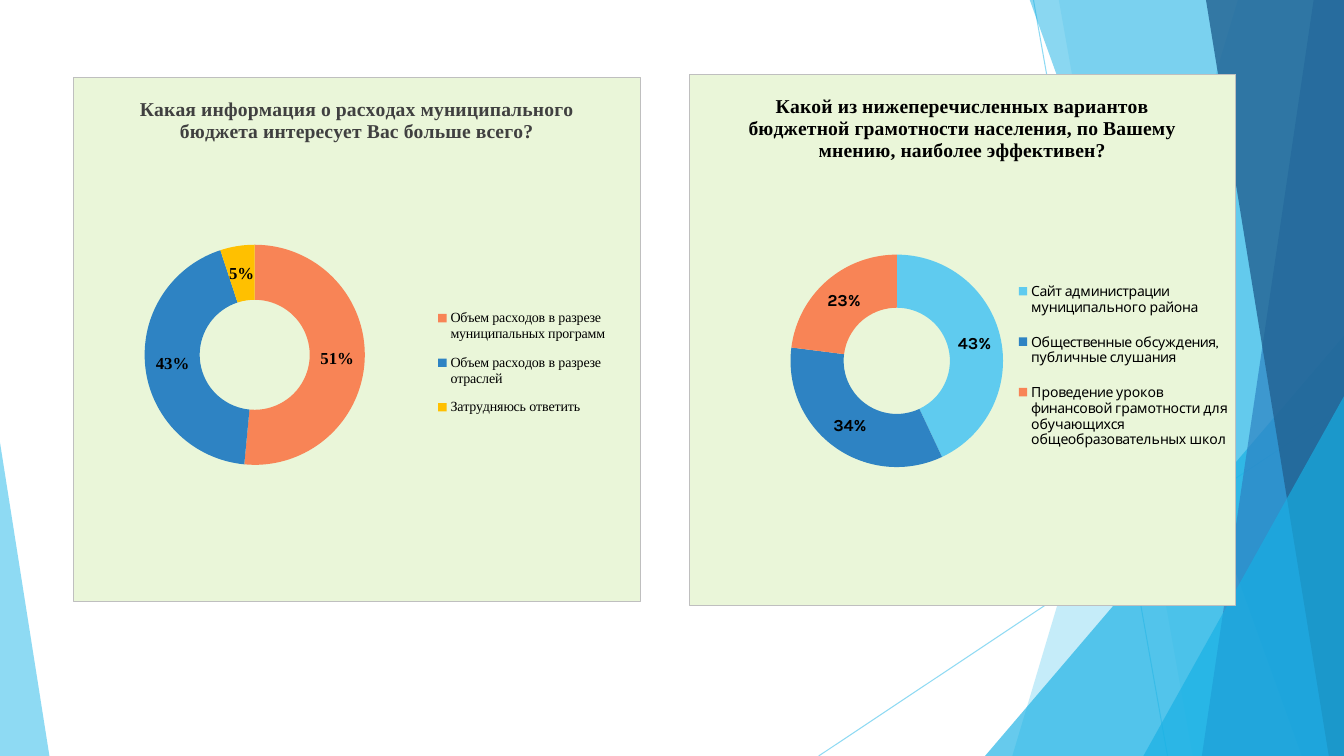
from pptx import Presentation
from pptx import util as u
from pptx.chart import data
from pptx.dml.color import RGBColor
from pptx.enum import chart as ce, shapes
from pptx.oxml import parse_xml
from pptx.oxml.ns import nsdecls, qn

SKY = RGBColor(0x5F, 0xCB, 0xEF)
AQUA = RGBColor(0x17, 0xB0, 0xE4)
BLUE = RGBColor(0x2E, 0x83, 0xC3)
NAVY = RGBColor(0x22, 0x62, 0x92)
CORAL = RGBColor(0xF8, 0x84, 0x56)
GOLD = RGBColor(0xFF, 0xC0, 0x00)
BLACK = RGBColor(0, 0, 0)
GREY = RGBColor(0x40, 0x40, 0x40)
SERIF = "Times New Roman"
WIDE, HIGH, TOP = 13.33, 7.5, -0.01


class Deck:
    panel = "EAF6D9"
    edge = "BFBFBF"

    def __init__(self):
        self.prs = Presentation()
        self.prs.slide_width = u.Inches(WIDE)
        self.prs.slide_height = u.Inches(HIGH)
        self.slide = self.prs.slides.add_slide(self.prs.slide_layouts[6])
        self.shapes = self.slide.shapes

    def fade(self, item, alpha):
        for clr in item.element.spPr.iter(qn("a:srgbClr")):
            clr.append(parse_xml(f'<a:alpha {nsdecls("a")} val="{alpha * 1000}"/>'))

    def paint(self, shape, color, alpha):
        shape.shadow.inherit = False
        shape.fill.solid()
        shape.fill.fore_color.rgb = color
        shape.line.fill.background()
        self.fade(shape, alpha)

    def line(self, *ends):
        line = self.shapes.add_connector(
            shapes.MSO_CONNECTOR.STRAIGHT, *map(u.Inches, ends))
        line.line.color.rgb = SKY
        line.line.width = u.Pt(0.75)
        line.element.spPr.append(parse_xml(f'<a:effectLst {nsdecls("a")}/>'))
        self.fade(line, 70)

    def band(self, top, base, color, alpha):
        pts = [(u.Inches(x), u.Inches(y)) for x, y in
               ((top, TOP), (WIDE, TOP), (WIDE, HIGH), (base, HIGH))]
        form = self.shapes.build_freeform(*pts[0])
        form.add_line_segments(pts[1:])
        self.paint(form.convert_to_shape(), color, alpha)

    def wedge(self, box, apex, color, alpha):
        shape = self.shapes.add_shape(
            shapes.MSO_SHAPE.ISOSCELES_TRIANGLE, *map(u.Inches, box))
        shape.adjustments[0] = apex
        self.paint(shape, color, alpha)

    def place(self, node, index, box, inner=False):
        for old in node.findall(qn("c:layout")):
            node.remove(old)
        target = '<c:layoutTarget val="inner"/>' if inner else ""
        modes = '<c:xMode val="edge"/><c:yMode val="edge"/>'
        sizes = "".join(f'<c:{k} val="{v}"/>' for k, v in zip("xywh", box))
        node.insert(index, parse_xml(
            f'<c:layout {nsdecls("c")}><c:manualLayout>{target}{modes}{sizes}'
            '</c:manualLayout></c:layout>'))

    def style(self, font, size, face, color=BLACK, bold=False):
        font.size = u.Pt(size)
        font.name = face
        font.color.rgb = color
        font.bold = bold

    def ring(self, box, title, ink, face, parts, plot, key):
        info = data.CategoryChartData()
        info.categories = [name for name, _, _ in parts]
        info.add_series("Series 1", [val for _, val, _ in parts])
        chart = self.shapes.add_chart(
            ce.XL_CHART_TYPE.DOUGHNUT, *map(u.Inches, box), info).chart
        self.style(chart.font, 10, face)

        chart.has_title = True
        para = chart.chart_title.text_frame.paragraphs[0]
        para.text = title
        self.style(para.font, 14, SERIF, ink, True)

        chart.has_legend = True
        legend = chart.legend
        legend.position = ce.XL_LEGEND_POSITION.RIGHT
        legend.include_in_layout = False
        self.style(legend.font, 10, face)

        rings = chart.plots[0]
        rings.vary_by_categories = True
        for i, (_, _, color) in enumerate(parts):
            fill = rings.series[0].points[i].format.fill
            fill.solid()
            fill.fore_color.rgb = color
        rings.has_data_labels = True
        labels = rings.data_labels
        labels.show_percentage = False
        labels.show_value = True
        labels.number_format = '0"%"'
        labels.number_format_is_linked = False
        self.style(labels.font, 12, face, bold=True)

        root = chart.element.find(qn("c:chart"))
        self.place(root.find(qn("c:plotArea")), 0, plot, True)
        self.place(root.find(qn("c:legend")), 1, key)
        root.addnext(parse_xml(
            f'<c:spPr {nsdecls("c", "a")}><a:solidFill><a:srgbClr val="{self.panel}"/>'
            f'</a:solidFill><a:ln w="9525"><a:solidFill><a:srgbClr val="{self.edge}"/>'
            '</a:solidFill></a:ln></c:spPr>'))


def main():
    deck = Deck()
    deck.line(10.25, 0, 11.58, HIGH)
    deck.line(WIDE, 4.03, 8.12, HIGH)
    deck.band(12.28, 10.04, SKY, 36)
    deck.band(10.5, 11.83, SKY, 20)
    deck.wedge((9.77, 3.33, 3.56, 4.17), 1, AQUA, 66)
    deck.band(10.21, 12.91, AQUA, 50)
    deck.band(13.03, 11.92, BLUE, 70)
    deck.band(11.96, 13.18, NAVY, 80)
    deck.wedge((11.34, 3.93, 1.99, 3.57), 1, AQUA, 66)
    deck.wedge((0, 4.39, 0.49, 3.11), 0, SKY, 70)

    deck.ring(
        (0.72, 0.76, 5.64, 5.21),
        "Какая информация о расходах муниципального бюджета интересует Вас больше всего?",
        GREY, SERIF,
        [("Объем расходов в разрезе муниципальных программ", 51, CORAL),
         ("Объем расходов в разрезе отраслей", 43, BLUE),
         ("Затрудняюсь ответить", 5, GOLD)],
        (0.08, 0.32, 0.48, 0.42), (0.62, 0.42, 0.34, 0.25))
    deck.ring(
        (6.83, 0.73, 5.43, 5.28),
        "Какой из нижеперечисленных вариантов бюджетной грамотности населения, "
        "по Вашему мнению, наиболее эффективен?",
        BLACK, "Karla",
        [("Сайт администрации муниципального района", 43, SKY),
         ("Общественные обсуждения, публичные слушания", 34, BLUE),
         ("Проведение уроков финансовой грамотности для обучающихся "
          "общеобразовательных школ", 23, CORAL)],
        (0.15, 0.34, 0.46, 0.4), (0.61, 0.36, 0.39, 0.38))
    deck.prs.save("out.pptx")


if __name__ == "__main__":
    main()
